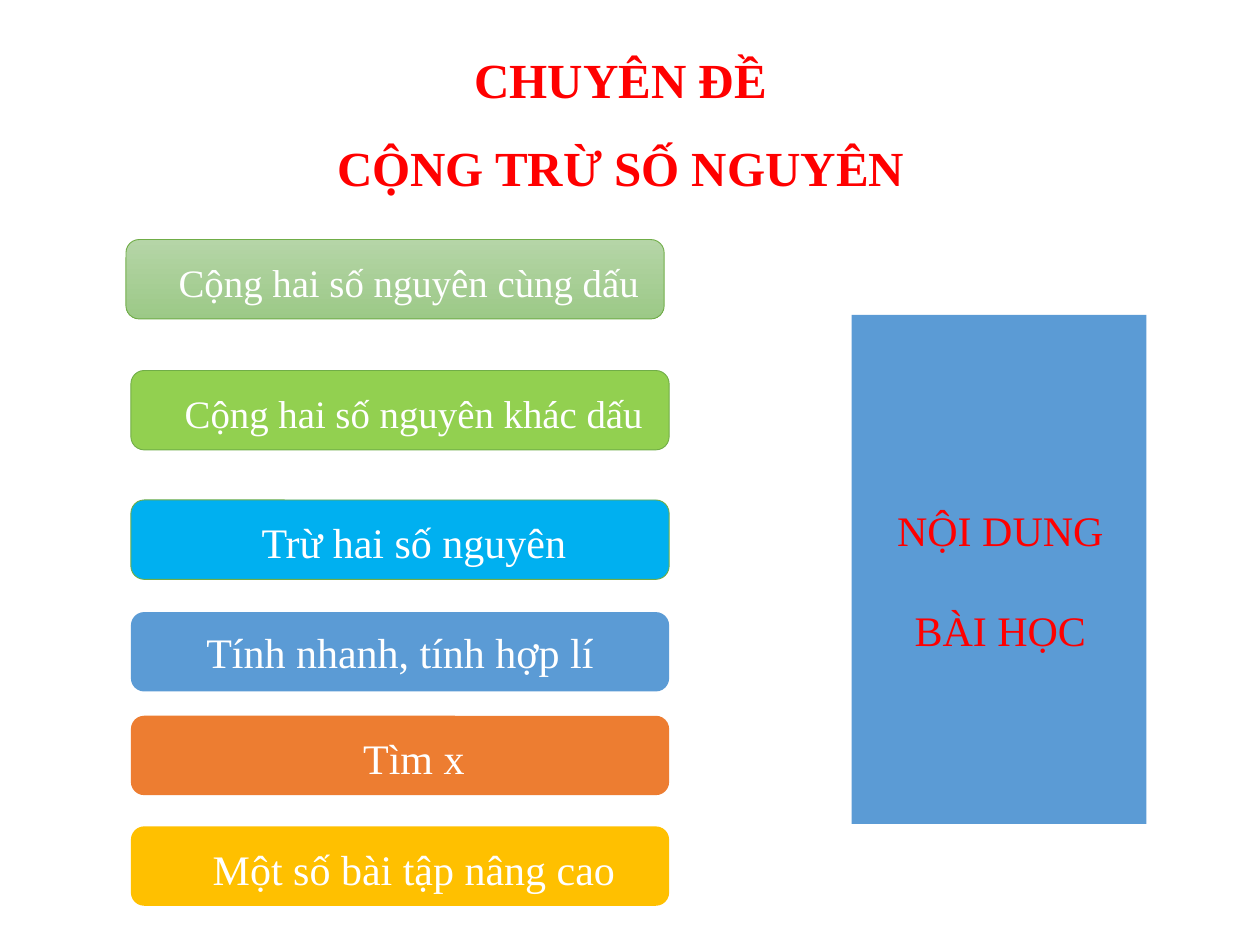
"""Builds the lesson overview slide on adding and subtracting integers."""
from dataclasses import dataclass
from typing import Any

from pptx import Presentation
from pptx import util as u
from pptx.dml.color import RGBColor
from pptx.enum import shapes, text

COLORS = {
    "red": "FF0000", "white": "FFFFFF", "blue": "5B9BD5", "sky": "00B0F0",
    "lime": "92D050", "orange": "ED7D31", "gold": "FFC000", "edge": "70AD47",
    "pale": "B5D5A7", "sage": "9CC987",
}


def color(name):
    """Return the named colour."""
    return RGBColor.from_string(COLORS[name])


def apply(target, values):
    """Set each attribute of the target from a dict."""
    for name, value in values.items():
        setattr(target, name, value)


@dataclass
class Lesson:
    """Holds the style and the current slide."""
    page: Any
    font: str = "Times New Roman"

    def label(self, shape, lines, size, ink, frame=None, layout=None, bold=False):
        """Put centred paragraphs into a shape."""
        box = shape.text_frame
        apply(box, {"word_wrap": True, **(frame or {})})
        for index, line in enumerate(lines):
            para = box.add_paragraph() if index else box.paragraphs[0]
            apply(para, {"alignment": text.PP_ALIGN.CENTER, **(layout or {})})
            span = para.add_run()
            span.text = line
            apply(span.font, {"name": self.font, "size": u.Pt(size), "bold": bold})
            span.font.color.rgb = color(ink)

    def title(self, place, lines):
        """Fill the title placeholder."""
        shape = self.page.shapes.title
        names = ("left", "top", "width", "height")
        apply(shape, dict(zip(names, map(u.Cm, place))))
        frame = {"vertical_anchor": text.MSO_ANCHOR.TOP,
                 "auto_size": text.MSO_AUTO_SIZE.SHAPE_TO_FIT_TEXT}
        self.label(shape, lines, 28, "red", frame, {"line_spacing": 1.5}, True)

    def block(self, kind, place, fill, edge=None):
        """Add a filled preset shape; a pair of fills makes a gradient."""
        shape = self.page.shapes.add_shape(kind, *map(u.Cm, place))
        shape.shadow.inherit = False
        if isinstance(fill, tuple):
            shape.fill.gradient()
            shape.fill.gradient_angle = 270
            for stop, name in zip(shape.fill.gradient_stops, fill):
                stop.color.rgb = color(name)
        else:
            shape.fill.solid()
            shape.fill.fore_color.rgb = color(fill)
        if edge:
            shape.line.color.rgb = color(edge)
            shape.line.width = u.Pt(0.5)
        else:
            shape.line.fill.background()
        return shape

    def topic(self, left, top, name, fill, edge=None, size=24, inset=0.81, spacing=1.1):
        """Add one rounded topic bar."""
        bar = self.block(shapes.MSO_SHAPE.ROUNDED_RECTANGLE,
                         (left, top, 10.85, 1.6), fill, edge)
        frame = {"vertical_anchor": text.MSO_ANCHOR.MIDDLE, "margin_left": u.Cm(inset)}
        self.label(bar, [name], size, "white", frame, {"line_spacing": spacing})

    def caption(self, place, name):
        """Add the wrapped panel caption."""
        box = self.page.shapes.add_textbox(*map(u.Cm, place))
        frame = {"auto_size": text.MSO_AUTO_SIZE.SHAPE_TO_FIT_TEXT}
        layout = {"line_spacing": 2.0, "space_before": u.Pt(0), "space_after": u.Pt(6)}
        self.label(box, [name], 24, "red", frame, layout)


def main():
    """Build and save the deck."""
    deck = Presentation()
    apply(deck, {"slide_width": u.Cm(25.4), "slide_height": u.Cm(19.05)})
    lesson = Lesson(deck.slides.add_slide(deck.slide_layouts[5]))
    lesson.title((-0.38, 0.28, 25.78, 3.63), ["CHUYÊN ĐỀ", "CỘNG TRỪ SỐ NGUYÊN"])
    lesson.block(shapes.MSO_SHAPE.RECTANGLE, (17.17, 6.35, 5.94, 10.26), "blue")
    lesson.caption((17.75, 9.02, 4.83, 4.04), "NỘI DUNG BÀI HỌC")
    left = 2.64
    lesson.topic(2.54, 4.83, "Cộng hai số nguyên cùng dấu", ("pale", "sage"), "edge", 22.2)
    lesson.topic(left, 7.47, "Cộng hai số nguyên khác dấu", "lime", "edge", 22.2)
    lesson.topic(left, 10.08, "Trừ hai số nguyên", "sky", "edge")
    lesson.topic(left, 12.34, "Tính nhanh, tính hợp lí", "blue", inset=0.25, spacing=1.0)
    lesson.topic(left, 14.43, "Tìm x", "orange")
    lesson.topic(left, 16.66, "Một số bài tập nâng cao", "gold")
    deck.save("out.pptx")


if __name__ == "__main__":
    main()
